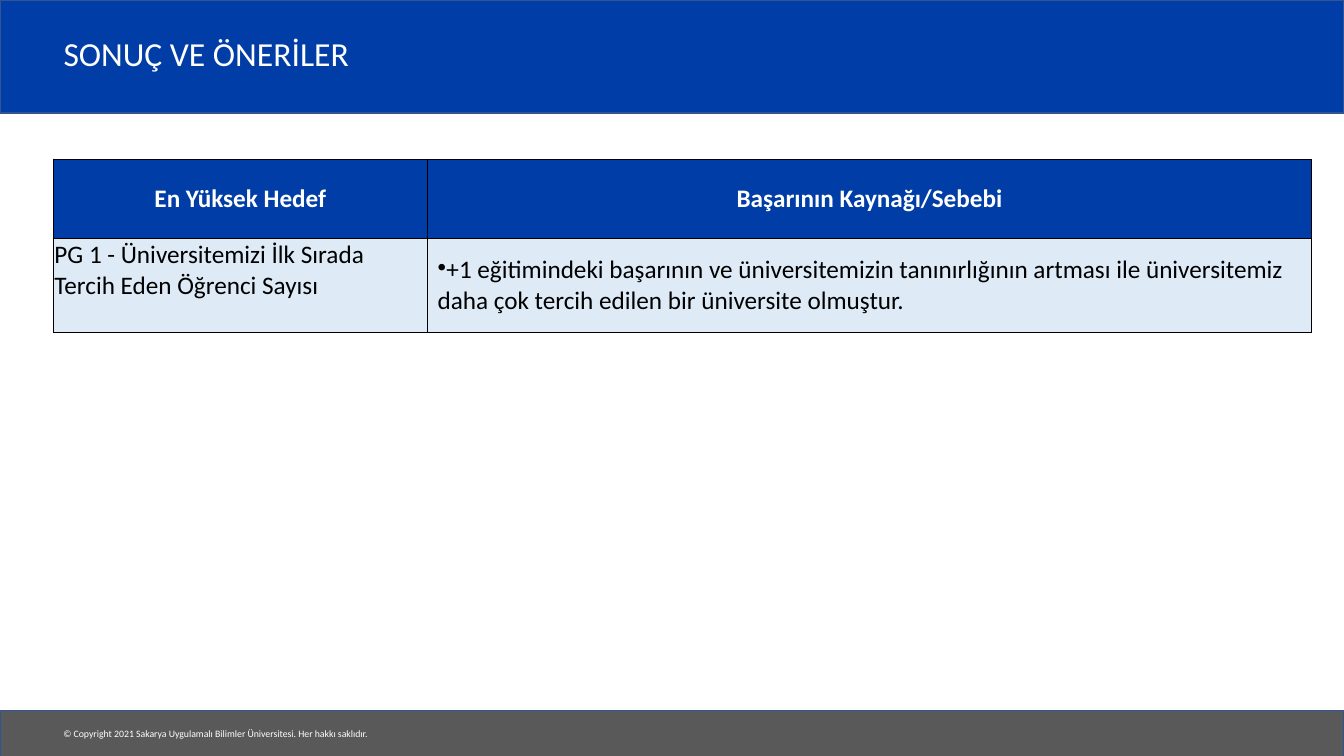
from pptx import Presentation
from pptx.dml.color import RGBColor
from pptx.enum.shapes import MSO_SHAPE as Shape
from pptx.enum.text import MSO_ANCHOR as Anchor, MSO_AUTO_SIZE as Fit, PP_ALIGN as Align
from pptx.oxml.ns import qn
from pptx.util import Inches, Pt
from lxml.etree import SubElement

BLUE, GREY, PALE = "003DA6", "595959", "DEEBF7"
EDGE, WHITE, BLACK = "325491", "FFFFFF", "000000"


def paint(part, color):
    """Give a fill a solid colour."""
    part.solid()
    part.fore_color.rgb = RGBColor.from_string(color)


def write(frame, text, size=18, color=BLACK, bold=False, align=Align.LEFT,
          bullet=None, spacing=None):
    """Put one formatted paragraph in a text frame."""
    para = frame.paragraphs[0]
    para.text = text
    para.alignment = align
    if spacing:
        para.line_spacing = spacing
    if bullet:
        props = para._p.get_or_add_pPr()
        props.set("marL", "0")
        props.set("indent", "0")
        SubElement(props, qn("a:buChar"), char=bullet)
    font = para.runs[0].font
    font.name, font.size, font.bold = "Calibri", Pt(size), bold
    font.color.rgb = RGBColor.from_string(color)


def border(cell, color=BLACK, width=1):
    props = cell._tc.get_or_add_tcPr()
    for side in ("a:lnL", "a:lnR", "a:lnT", "a:lnB"):
        line = SubElement(props, qn(side), w=str(Pt(width)))
        fill = SubElement(line, qn("a:solidFill"))
        SubElement(fill, qn("a:srgbClr"), val=color)


class Deck:
    def __init__(self):
        self.file = Presentation()
        self.file.slide_width = Inches(13.33)
        self.file.slide_height = Inches(7.5)
        self.slide = self.file.slides.add_slide(self.file.slide_layouts[5])
        self.shapes = self.slide.shapes

    def bar(self, top, height, color):
        bar = self.shapes.add_shape(Shape.RECTANGLE, 0, Inches(top),
                                    self.file.slide_width, Inches(height))
        bar.shadow.inherit = False
        paint(bar.fill, color)
        paint(bar.line.fill, EDGE)
        bar.line.width = Pt(1)

    def title(self, text, box):
        title = self.shapes.title
        title.left, title.top, title.width, title.height = map(Inches, box)
        frame = title.text_frame
        frame.vertical_anchor = Anchor.MIDDLE
        frame.auto_size = Fit.NONE
        write(frame, text, size=24, color=WHITE, spacing=0.9)
        self.shapes._spTree.append(title._element)  # bring above the bars

    def label(self, text, box, **style):
        frame = self.shapes.add_textbox(*map(Inches, box)).text_frame
        frame.word_wrap = False
        frame.auto_size = Fit.SHAPE_TO_FIT_TEXT
        write(frame, text, **style)

    def table(self, left, top, cols, rows):
        """Add an empty table of the given column widths and row heights."""
        size = left, top, sum(cols), sum(rows)
        grid = self.shapes.add_table(len(rows), len(cols), *map(Inches, size)).table
        for col, width in zip(grid.columns, cols):
            col.width = Inches(width)
        for row, height in zip(grid.rows, rows):
            row.height = Inches(height)
        return grid

    def cell(self, cell, text, fill, anchor=Anchor.MIDDLE, inset=None, **style):
        border(cell)
        paint(cell.fill, fill)
        cell.vertical_anchor = anchor
        if inset is not None:
            cell.margin_left = cell.margin_right = cell.margin_top = Inches(inset)
            cell.margin_bottom = 0
        write(cell.text_frame, text, **style)


def main():
    deck = Deck()
    deck.bar(0, 1.12, BLUE)
    deck.bar(7.05, 0.46, GREY)
    deck.label("© Copyright 2021 Sakarya Uygulamalı Bilimler Üniversitesi. "
               "Her hakkı saklıdır.", (0.53, 7.17, 3.29, 0.22), size=7, color=WHITE)
    deck.title("SONUÇ VE ÖNERİLER", (0.53, 0.19, 11.03, 0.73))

    grid = deck.table(0.53, 1.58, cols=(3.71, 8.77), rows=(0.79, 0.93))
    for col, head in enumerate(("En Yüksek Hedef", "Başarının Kaynağı/Sebebi")):
        deck.cell(grid.cell(0, col), head, BLUE, color=WHITE, bold=True,
                  align=Align.CENTER)
    deck.cell(grid.cell(1, 0), "PG 1 - Üniversitemizi İlk Sırada Tercih Eden "
              "Öğrenci Sayısı", PALE, anchor=Anchor.TOP, inset=0.01)
    deck.cell(grid.cell(1, 1), "+1 eğitimindeki başarının ve üniversitemizin "
              "tanınırlığının artması ile üniversitemiz daha çok tercih edilen bir "
              "üniversite olmuştur.", PALE, bullet="•")
    deck.file.save("out.pptx")


if __name__ == "__main__":
    main()
